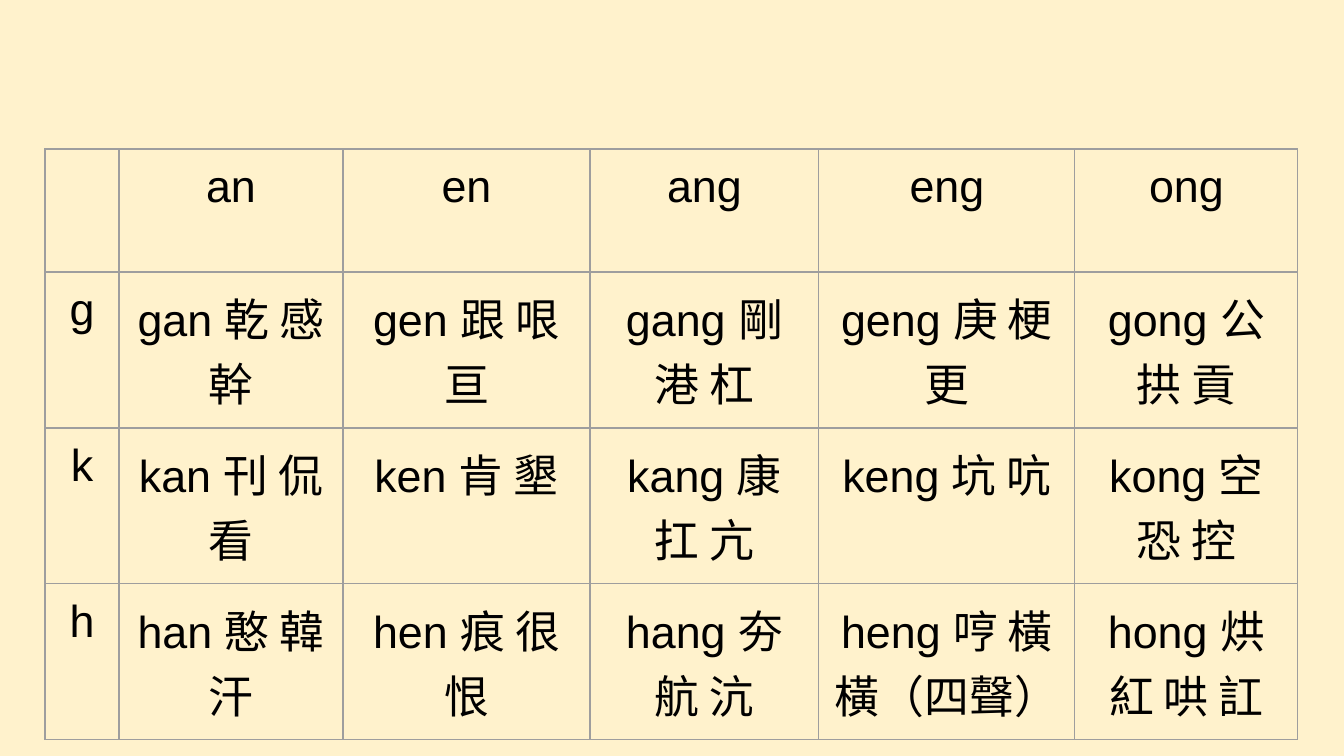
"""Build a slide with a table of Mandarin syllables by initial and final."""
from dataclasses import dataclass

from lxml.etree import SubElement
from pptx import Presentation
from pptx.dml.color import RGBColor
from pptx.enum.text import PP_ALIGN
from pptx.oxml.ns import qn
from pptx.util import Emu, Pt

FINALS = ["", "an", "en", "ang", "eng", "ong"]
SYLLABLES = [
    ["g", "gan 乾 感 幹", "gen 跟 哏 亘", "gang 剛 港 杠", "geng 庚 梗 更", "gong 公 拱 貢"],
    ["k", "kan 刊 侃 看", "ken 肯 墾", "kang 康 扛 亢", "keng 坑 吭", "kong 空 恐 控"],
    ["h", "han 憨 韓 汗", "hen 痕 很 恨", "hang 夯 航 沆", "heng 哼 橫 橫（四聲）", "hong 烘 紅 哄 訌"],
]
COLUMN_WIDTHS = [74, 224, 247, 229, 256, 223]
HEADER_HEIGHT, SYLLABLE_HEIGHT = 123, 151
TABLE_LEFT, TABLE_TOP = 45, 149
CELL_MARGIN = 13
SLIDE_WIDTH, SLIDE_HEIGHT = 1344, 756


@dataclass(frozen=True)
class Theme:
    background: str = "FFF2CC"
    border: str = "9E9E9E"
    text: str = "000000"
    font: str = "Arial"
    size: int = 24
    border_width: float = 0.75


THEME = Theme()


def px(n):
    return Emu(round(n * 914400 / 134.4))


def write(tf, text, size=THEME.size, color=THEME.text, align=PP_ALIGN.CENTER):
    p = tf.paragraphs[0]
    p.alignment = align
    p.font.size = Pt(size)
    if text:
        r = p.add_run()
        r.text = text
        r.font.name = THEME.font
        r.font.size = Pt(size)
        r.font.bold = False
        r.font.color.rgb = RGBColor.from_string(color)


def add_borders(cell):
    properties = cell._tc.get_or_add_tcPr()
    for side in ("lnL", "lnR", "lnT", "lnB"):
        line = SubElement(properties, qn(f"a:{side}"), w=str(Pt(THEME.border_width)))
        fill = SubElement(line, qn("a:solidFill"))
        SubElement(fill, qn("a:srgbClr"), val=THEME.border)


def format_cell(cell):
    cell.margin_left = cell.margin_right = px(CELL_MARGIN)
    cell.margin_top = cell.margin_bottom = px(CELL_MARGIN)
    add_borders(cell)
    cell.fill.background()


def add_syllable_table(s):
    rows = [FINALS, *SYLLABLES]
    heights = [HEADER_HEIGHT] + [SYLLABLE_HEIGHT] * len(SYLLABLES)
    table = s.shapes.add_table(
        len(rows), len(FINALS), px(TABLE_LEFT), px(TABLE_TOP),
        px(sum(COLUMN_WIDTHS)), px(sum(heights)),
    ).table
    table.first_row = table.horz_banding = False
    for column, width in zip(table.columns, COLUMN_WIDTHS):
        column.width = px(width)
    for row, height, texts in zip(table.rows, heights, rows):
        row.height = px(height)
        for cell, text in zip(row.cells, texts):
            format_cell(cell)
            write(cell.text_frame, text)


def main():
    prs = Presentation()
    prs.slide_width, prs.slide_height = px(SLIDE_WIDTH), px(SLIDE_HEIGHT)
    s = prs.slides.add_slide(prs.slide_layouts[6])
    s.background.fill.solid()
    s.background.fill.fore_color.rgb = RGBColor.from_string(THEME.background)
    add_syllable_table(s)
    prs.save("out.pptx")


if __name__ == "__main__":
    main()
